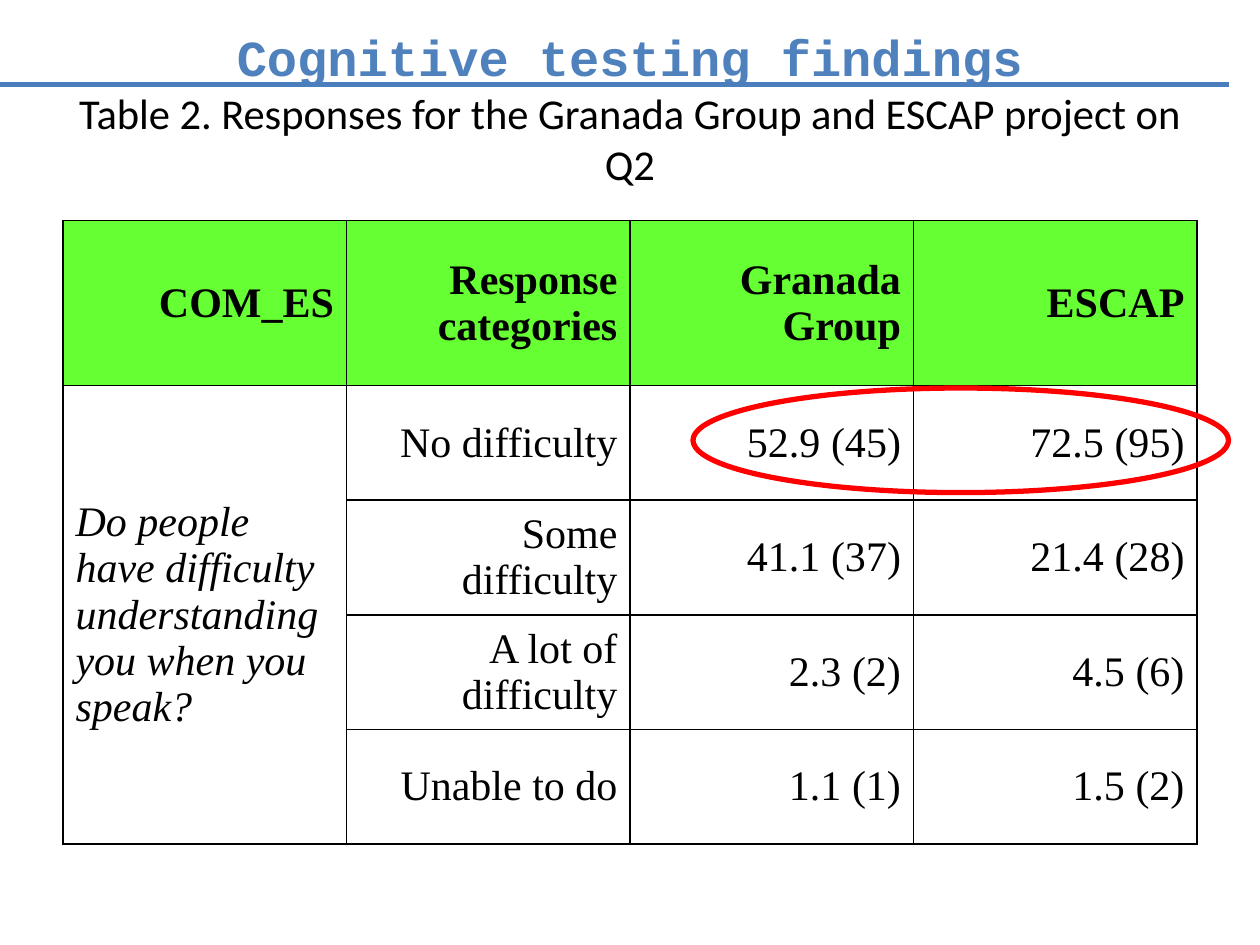
from lxml import etree
from pptx import Presentation
from pptx.dml.color import RGBColor
from pptx.enum.shapes import MSO_CONNECTOR, MSO_SHAPE
from pptx.enum.text import MSO_ANCHOR, PP_ALIGN
from pptx.oxml.ns import qn
from pptx.util import Emu, Inches, Pt

LEFT, MID, RIGHT = PP_ALIGN.LEFT, PP_ALIGN.CENTER, PP_ALIGN.RIGHT
HUES = {"title": "4F81BD", "rule": "4B7EBC", "ink": "000000",
        "head": "66FF33", "ring": "FF0000"}
TITLE = "Cognitive testing findings"
CAPTION = "Table 2. Responses for the Granada Group and ESCAP project on Q2"
HEAD = ["COM_ES", "Response categories", "Granada Group", "ESCAP"]
ASK = "Do people have difficulty understanding you when you speak?"
ROWS = [
    ("No difficulty", "52.9 (45)", "72.5 (95)"),
    ("Some difficulty", "41.1 (37)", "21.4 (28)"),
    ("A lot of difficulty", "2.3 (2)", "4.5 (6)"),
    ("Unable to do", "1.1 (1)", "1.5 (2)"),
]
EDGE, TOP = 0.5, 1.75
COL, HEAD_ROW, ROW = 2.25, 1.31, 0.91
FLAT = (0, 0)
SMALL = (0.12, 0)
HANG = (0.4, -0.28)


def hue(name):
    return RGBColor.from_string(HUES[name])


def write(par, text, font="Times New Roman", size=24, ink="ink", bold=False,
          slant=False, align=RIGHT, indent=FLAT, before=0):
    par.alignment = align
    par.space_before = Pt(before)
    props = par._p.get_or_add_pPr()
    for key, inch in zip(("marL", "indent"), indent):
        props.set(key, str(Inches(inch)))
    run = par.add_run()
    run.text = text
    face = run.font
    face.name, face.size, face.bold, face.italic = font, Pt(size), bold, slant
    face.color.rgb = hue(ink)


def frame(cell):
    """Give a cell thin borders; they must stand before its fill."""
    props = cell._tc.get_or_add_tcPr()
    for spot, side in enumerate(("lnL", "lnR", "lnT", "lnB")):
        line = etree.Element(qn("a:" + side), w=str(Pt(1)))
        fill = etree.SubElement(line, qn("a:solidFill"))
        etree.SubElement(fill, qn("a:srgbClr"), val=HUES["ink"])
        props.insert(spot, line)


def add_title(slide):
    box = slide.shapes.add_textbox(
        Inches(EDGE), Inches(0.21), Inches(4 * COL), Inches(1.3))
    body = box.text_frame
    body.word_wrap = True
    body.margin_top = body.margin_bottom = Emu(0)
    write(body.paragraphs[0], TITLE, font="Courier New", size=28.8,
          ink="title", bold=True, align=MID)
    write(body.add_paragraph(), CAPTION, font="Calibri", size=24.3, align=MID)


def add_grid(slide):
    high = HEAD_ROW + ROW * len(ROWS)
    table = slide.shapes.add_table(
        len(ROWS) + 1, len(HEAD), Inches(EDGE), Inches(TOP),
        Inches(COL * len(HEAD)), Inches(high)).table
    for col in table.columns:
        col.width = Inches(COL)
    for i, row in enumerate(table.rows):
        row.height = Inches(ROW if i else HEAD_ROW)
    for cell in table.iter_cells():
        cell.vertical_anchor = MSO_ANCHOR.MIDDLE
        cell.fill.background()
        frame(cell)
    for c, text in enumerate(HEAD):
        cell = table.cell(0, c)
        cell.fill.solid()
        cell.fill.fore_color.rgb = hue("head")
        write(cell.text_frame.paragraphs[0], text, bold=True,
              indent=SMALL if c < 2 else HANG, before=4 if c < 2 else 0)
    ask = table.cell(1, 0)
    ask.merge(table.cell(len(ROWS), 0))
    write(ask.text_frame.paragraphs[0], ASK, slant=True, align=LEFT)
    for r, row in enumerate(ROWS, 1):
        for c, text in enumerate(row, 1):
            write(table.cell(r, c).text_frame.paragraphs[0], text, indent=HANG)


def add_marks(slide):
    ring = slide.shapes.add_shape(
        MSO_SHAPE.OVAL, Inches(5.5), Inches(3.08), Inches(4.25), Inches(0.83))
    ring.shadow.inherit = False
    ring.fill.background()
    rule = slide.shapes.add_connector(
        MSO_CONNECTOR.STRAIGHT, 0, Inches(0.67), Inches(9.75), Inches(0.67))
    etree.SubElement(rule._element.spPr, qn("a:effectLst"))
    for mark, name in ((ring, "ring"), (rule, "rule")):
        mark.line.color.rgb = hue(name)
        mark.line.width = Pt(3)


def main():
    deck = Presentation()
    deck.slide_width, deck.slide_height = Inches(10), Inches(7.5)
    slide = deck.slides.add_slide(deck.slide_layouts[6])
    add_title(slide)
    add_grid(slide)
    add_marks(slide)
    deck.save("out.pptx")


if __name__ == "__main__":
    main()
